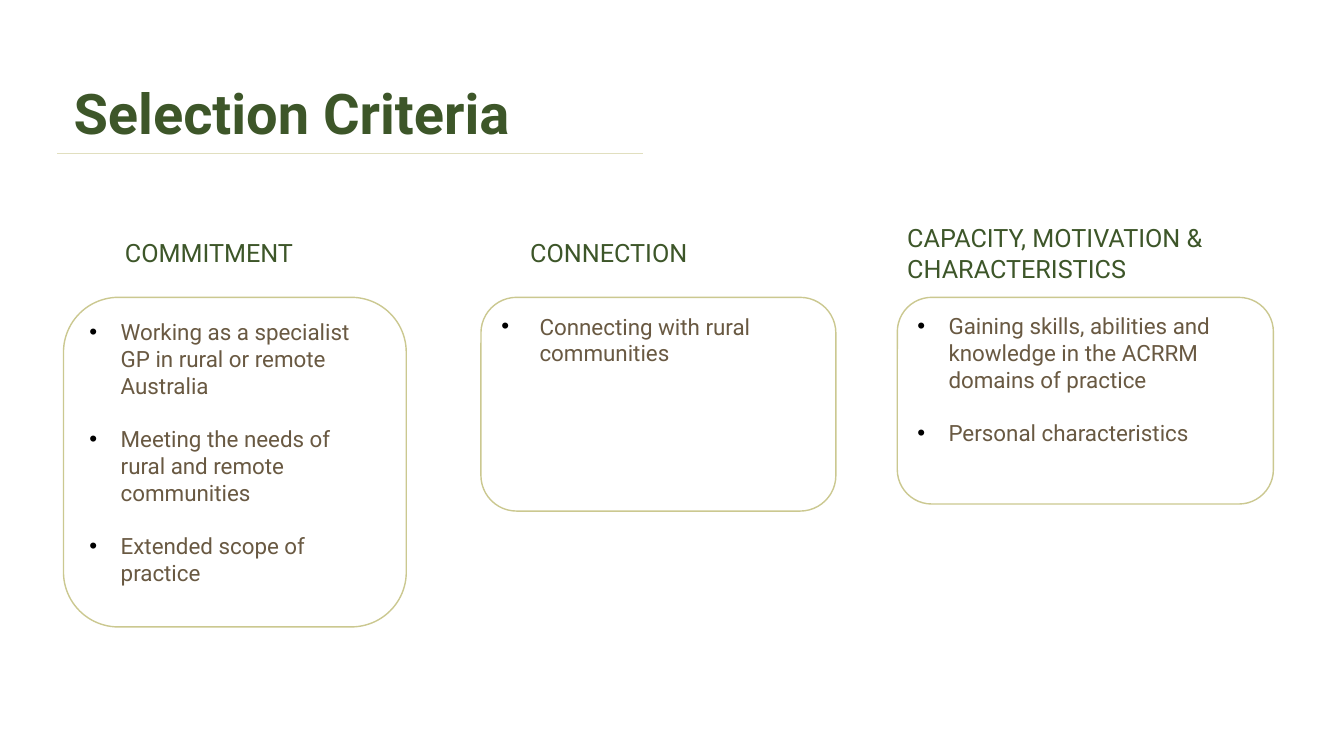
import pptx
import pptx.util
import pptx.dml.color
import pptx.enum.shapes
import pptx.enum.text
import pptx.oxml.ns
from lxml import etree

Inches = pptx.util.Inches
Pt = pptx.util.Pt
RGBColor = pptx.dml.color.RGBColor
qn = pptx.oxml.ns.qn

GREEN = RGBColor(0x3D, 0x56, 0x29)
BROWN = RGBColor(0x69, 0x59, 0x42)
OLIVE = RGBColor(0xCB, 0xC8, 0x90)
PALE = RGBColor(0xE1, 0xDF, 0xBF)
WHITE = RGBColor(0xFF, 0xFF, 0xFF)
FONT = "Roboto"
CARD_TOP = 2.95
BULLET_GAP = Pt(18.75)

TITLE = "Selection Criteria"
CRITERIA = [
    {
        "heading": "COMMITMENT", "heading_at": (1.14, 2.31, 2.01, 0.4), "wrap": False,
        "left": 0.63, "width": 3.4, "height": 3.27, "indent": 0.31,
        "points": ["Working as a specialist GP in rural or remote Australia",
                   "Meeting the needs of rural and remote communities",
                   "Extended scope of practice"],
    },
    {
        "heading": "CONNECTION", "heading_at": (5.16, 2.31, 1.91, 0.4), "wrap": False,
        "left": 4.77, "width": 3.52, "height": 2.12, "indent": 0.38,
        "points": ["Connecting with rural communities"],
    },
    {
        "heading": "CAPACITY, MOTIVATION & CHARACTERISTICS",
        "heading_at": (8.9, 2.16, 3.73, 0.71), "wrap": True,
        "left": 8.9, "width": 3.73, "height": 2.05, "indent": 0.31,
        "points": ["Gaining skills, abilities and knowledge in the ACRRM domains of practice",
                   "Personal characteristics"],
    },
]


def add_run(paragraph, text, size, color, bold=False):
    run = paragraph.add_run()
    run.text = text
    run.font.name = FONT
    run.font.size = Pt(size)
    run.font.bold = bold
    run.font.color.rgb = color


def add_text(slide, place, text, size, bold=False, wrap=True):
    box = slide.shapes.add_textbox(*map(Inches, place))
    box.text_frame.word_wrap = wrap
    add_run(box.text_frame.paragraphs[0], text, size, GREEN, bold)
    return box.text_frame


def add_bullet(paragraph, indent):
    properties = paragraph._p.get_or_add_pPr()
    properties.set("marL", str(Inches(indent)))
    properties.set("indent", str(-Inches(indent)))
    color = etree.SubElement(properties, qn("a:buClr"))
    etree.SubElement(color, qn("a:srgbClr"), val="000000")
    etree.SubElement(properties, qn("a:buFont"), typeface="Arial")
    etree.SubElement(properties, qn("a:buChar"), char="•")


def add_card(slide, criterion):
    card = slide.shapes.add_shape(
        pptx.enum.shapes.MSO_SHAPE.ROUNDED_RECTANGLE,
        Inches(criterion["left"]), Inches(CARD_TOP),
        Inches(criterion["width"]), Inches(criterion["height"]))
    card.shadow.inherit = False
    card.fill.solid()
    card.fill.fore_color.rgb = WHITE
    card.line.color.rgb = OLIVE
    card.line.width = Pt(1)
    frame = card.text_frame
    frame.word_wrap = True
    frame.vertical_anchor = pptx.enum.text.MSO_ANCHOR.TOP
    for index, point in enumerate(criterion["points"]):
        paragraph = frame.add_paragraph() if index else frame.paragraphs[0]
        add_bullet(paragraph, criterion["indent"])
        paragraph.alignment = pptx.enum.text.PP_ALIGN.LEFT
        if index:
            paragraph.space_before = BULLET_GAP
        add_run(paragraph, point, 16, BROWN)


def main():
    presentation = pptx.Presentation()
    presentation.slide_width = Inches(13.33)
    presentation.slide_height = Inches(7.5)
    slide = presentation.slides.add_slide(presentation.slide_layouts[6])

    title = add_text(slide, (0.73, 0.85, 8.37, 0.45), TITLE, 40, bold=True)
    title.margin_left = title.margin_right = title.margin_top = title.margin_bottom = 0
    title.paragraphs[0].line_spacing = 0.9

    for criterion in CRITERIA:
        add_card(slide, criterion)
        add_text(slide, criterion["heading_at"], criterion["heading"], 18,
                 wrap=criterion["wrap"])

    rule = slide.shapes.add_connector(
        pptx.enum.shapes.MSO_CONNECTOR.STRAIGHT,
        Inches(0.57), Inches(1.52), Inches(6.38), Inches(1.52))
    rule.line.color.rgb = PALE
    rule.line.width = Pt(0.5)
    etree.SubElement(rule._element.spPr, qn("a:effectLst"))

    presentation.save("out.pptx")


if __name__ == "__main__":
    main()
